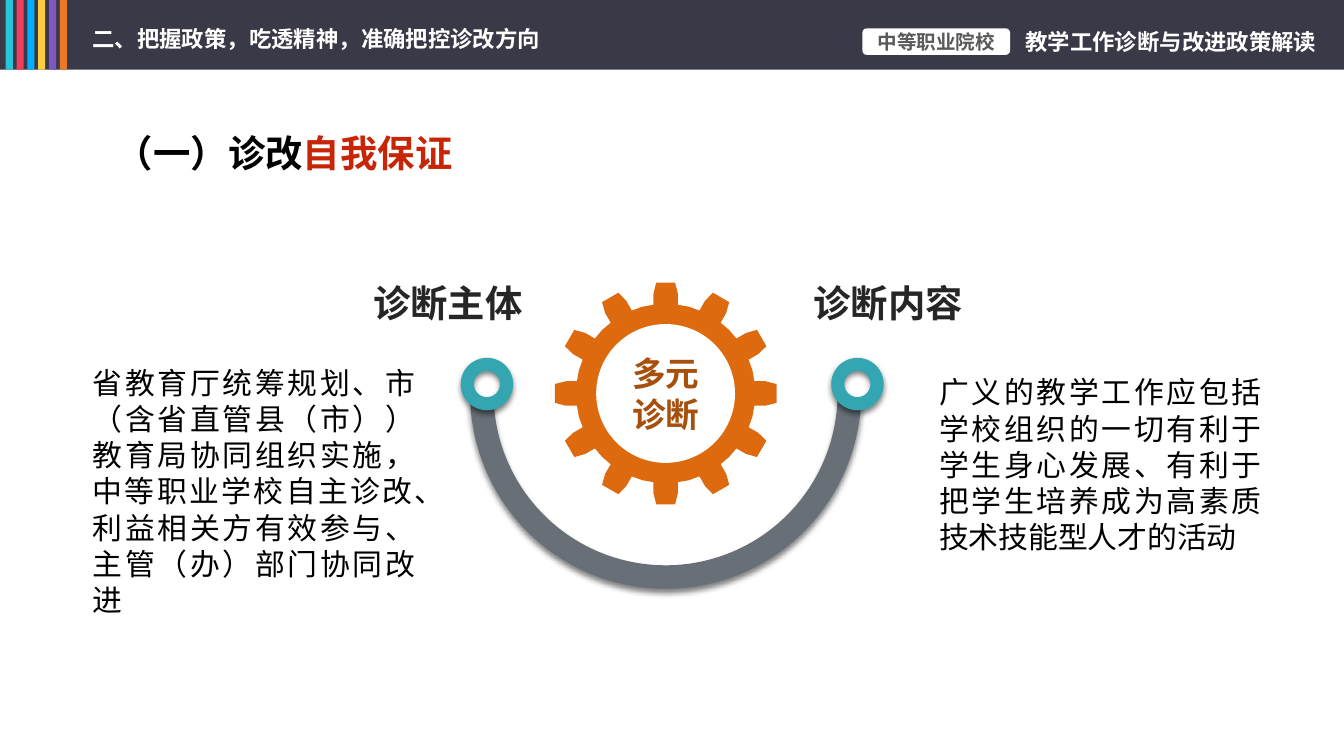
import math

import lxml.etree
import pptx
import pptx.dml.color
import pptx.enum.shapes
import pptx.enum.text
import pptx.oxml.ns
import pptx.util

Pt = pptx.util.Pt
SHAPE = pptx.enum.shapes.MSO_SHAPE
ALIGN = pptx.enum.text.PP_ALIGN
ANCHOR = pptx.enum.text.MSO_ANCHOR
FONT = "Noto Sans CJK SC"
STRIPES = ["26C6DA", "F23E5C", "00B0FF", "FFCD40", "7E57C1", "EC7825"]
TEAL = "34A6B2"
DARK = "262626"


def colour(hex_text):
    return pptx.dml.color.RGBColor.from_string(hex_text)


def add_child(parent, tag, **attributes):
    return lxml.etree.SubElement(parent, pptx.oxml.ns.qn(tag), attributes)


def paint(shape, fill):
    shape.fill.solid()
    shape.fill.fore_color.rgb = colour(fill)
    shape.line.fill.background()
    shape.shadow.inherit = False
    return shape


def block(slide, kind, x, y, w, h, fill):
    shape = slide.shapes.add_shape(kind, Pt(x), Pt(y), Pt(w), Pt(h))
    return paint(shape, fill)


def soft_shadow(shape):
    effects = shape._element.spPr.find(pptx.oxml.ns.qn("a:effectLst"))
    shadow = add_child(effects, "a:outerShdw", blurRad=str(Pt(3)), dist=str(Pt(2)),
                       dir="5400000", algn="t", rotWithShape="0")
    black = add_child(shadow, "a:srgbClr", val="000000")
    add_child(black, "a:alpha", val="50000")


def write(shape, parts, size, bold=True, align=ALIGN.CENTER, anchor=ANCHOR.TOP,
          inset=(7.2, 3.6), wrap=True):
    """Fill a shape with one paragraph made of (text, colour) parts."""
    frame = shape.text_frame
    frame.word_wrap = wrap
    frame.vertical_anchor = anchor
    frame.margin_left = frame.margin_right = Pt(inset[0])
    frame.margin_top = frame.margin_bottom = Pt(inset[1])
    paragraph = frame.paragraphs[0]
    paragraph.alignment = align
    paragraph.line_spacing = Pt(round(size * 1.21, 1))
    paragraph.font.size = Pt(size)
    paragraph.font.bold = bold
    paragraph.font.name = FONT
    add_child(paragraph._p.pPr.defRPr, "a:ea", typeface=FONT)
    for text, text_colour in parts:
        run = paragraph.add_run()
        run.text = text
        run.font.color.rgb = colour(text_colour)


def label(slide, x, y, w, h, parts, size, **options):
    write(slide.shapes.add_textbox(Pt(x), Pt(y), Pt(w), Pt(h)), parts, size, **options)


def header(slide, x, y, w, h):
    block(slide, SHAPE.RECTANGLE, x, y, w, h, "3A3947")
    # Coloured stripes
    for i, stripe in enumerate(STRIPES):
        block(slide, SHAPE.RECTANGLE, x + 3.1 + 5.8 * i, y, 3.8, h, stripe)
    # Chapter name, badge and deck name
    label(slide, x + 42.5, y + 10, 257, 21.6,
          [("二、把握政策，吃透精神，准确把控诊改方向", "FFFFFF")], 12,
          align=ALIGN.LEFT, anchor=ANCHOR.MIDDLE, wrap=False)
    badge = block(slide, SHAPE.ROUNDED_RECTANGLE, x + 462, y + 15.2, 79.2, 14.2, "FFFFFF")
    write(badge, [("中等职业院校", "595959")], 10.5, anchor=ANCHOR.MIDDLE, inset=(3, 0))
    label(slide, x + 548.5, y + 15.1, 157.7, 14.4,
          [("教学工作诊断与改进政策解读", "FFFFFF")], 12,
          anchor=ANCHOR.MIDDLE, inset=(0, 0), wrap=False)


def gear(slide, x, y, size):
    radius = size / 2
    # One tooth and the valley after it, as distances along and across its axis
    tooth = [(0.8, -0.11), (0.9, -0.11), (1, -0.085), (1, 0.085), (0.9, 0.11), (0.8, 0.11)]
    valley = (0.81 * math.cos(math.pi / 12), 0.81 * math.sin(math.pi / 12))
    outline = []
    for i in range(12):
        cos, sin = math.cos(i * math.pi / 6), math.sin(i * math.pi / 6)
        for along, across in tooth + [valley]:
            outline.append((Pt(x + radius * (1 + along * cos - across * sin)),
                            Pt(y + radius * (1 + along * sin + across * cos))))
    builder = slide.shapes.build_freeform(*outline[0])
    builder.add_line_segments(outline[1:], close=True)
    paint(builder.convert_to_shape(), "DE6A10")
    # White ring and the words at the hub
    rim = 0.187 * size
    ring = block(slide, SHAPE.DONUT, x + rim, y + rim, size - 2 * rim, size - 2 * rim, "FFFFFF")
    ring.adjustments[0] = 0.28
    hub = block(slide, SHAPE.RECTANGLE, x + radius - 25.5, y + radius - 24.8, 51, 49, "FFFFFF")
    write(hub, [("多元诊断", "A6500C")], 18, inset=(5, 2.9))


def diagram(slide, x, y, w, h):
    gear(slide, x + 50.4, y, 118.8)
    # Arc joining the two round ends
    arc = block(slide, SHAPE.BLOCK_ARC, x + 5, y - 45.5, 209.5, 209.5, "686F76")
    arc.rotation = 180
    for i, value in enumerate([109.38, 214.4, 0.06]):
        arc.adjustments[i] = value
    soft_shadow(arc)
    for end_x in (x + w - 28.1, x):
        soft_shadow(block(slide, SHAPE.DONUT, end_x, y + 40.3, 28.1, 28.1, TEAL))


def topic(slide, title_box, body_box, title, body):
    label(slide, *title_box, [(title, DARK)], 20)
    label(slide, *body_box, [(body, "000000")], 16, bold=False, align=ALIGN.JUSTIFY)


def main():
    deck = pptx.Presentation()
    deck.slide_width, deck.slide_height = Pt(720), Pt(405)
    slide = deck.slides.add_slide(deck.slide_layouts[6])
    header(slide, 0, 0, 720, 37.4)
    # Section heading
    label(slide, 54, 66.2, 196.6, 31.5,
          [("（一）诊改", "000000"), ("自我保证", "C82506")], 20, wrap=False)
    diagram(slide, 246.8, 151.4, 226.6, 164)
    # Topics on both sides
    topic(slide, (178.5, 146.2, 123, 31.5), (42.5, 191.5, 187.2, 143.3), "诊断主体",
          "省教育厅统筹规划、市（含省直管县（市））教育局协同组织实施，"
          "中等职业学校自主诊改、利益相关方有效参与、主管（办）部门协同改进")
    topic(slide, (427.7, 146.2, 96.5, 31.5), (496, 196.6, 187.2, 104.4), "诊断内容",
          "广义的教学工作应包括学校组织的一切有利于学生身心发展、"
          "有利于把学生培养成为高素质技术技能型人才的活动")
    deck.save("out.pptx")


if __name__ == "__main__":
    main()
